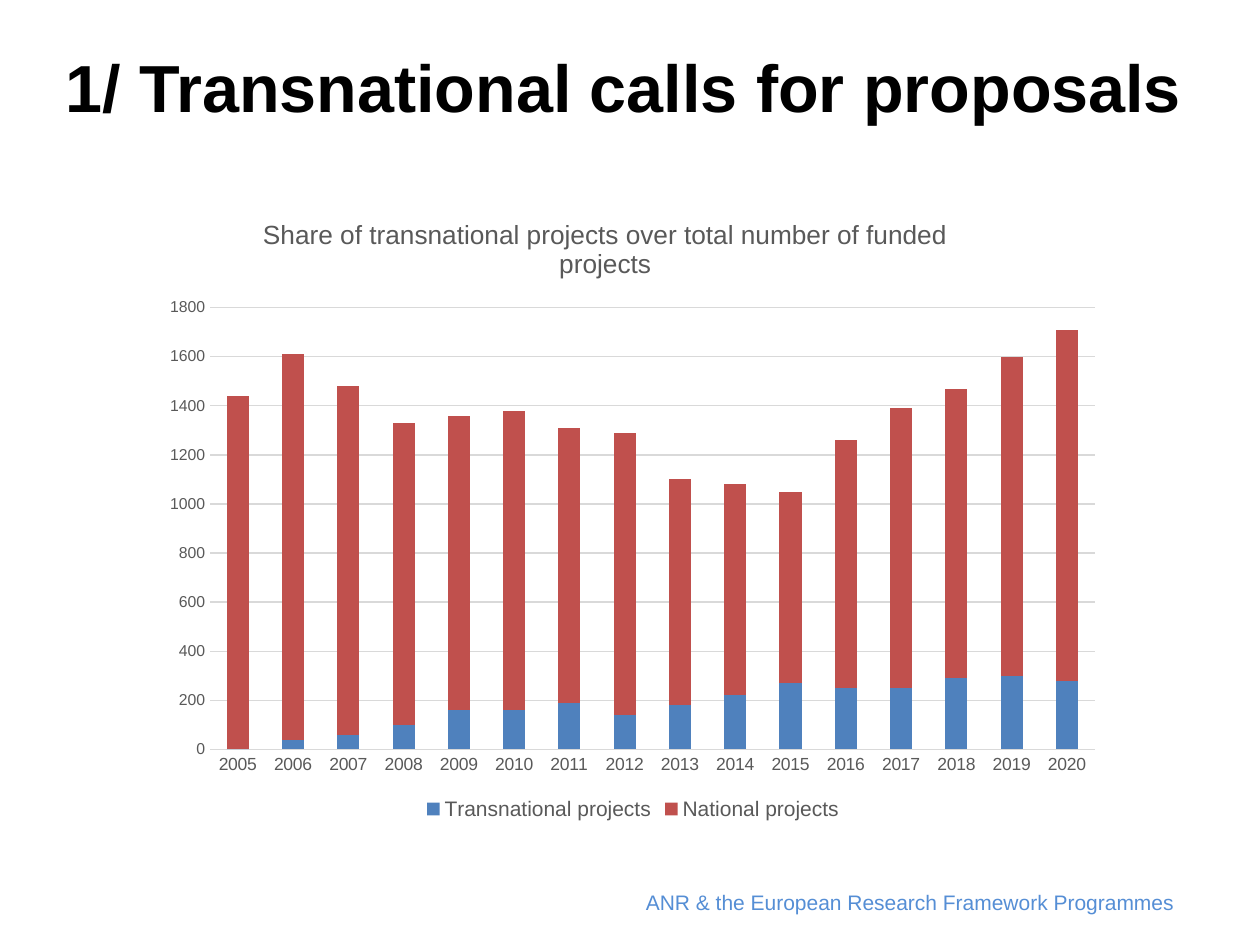
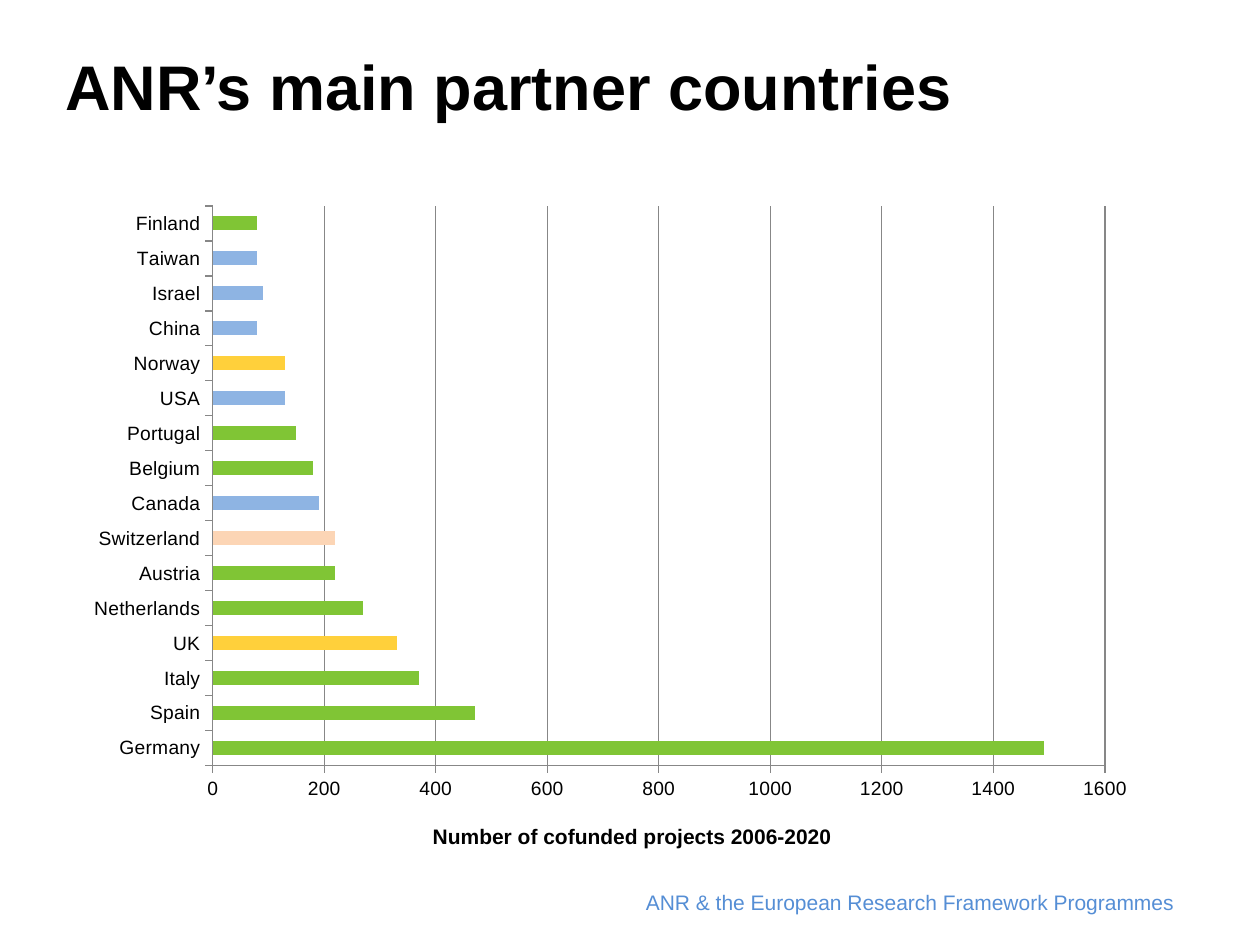
from lxml import etree
from pptx import Presentation
from pptx.chart.data import CategoryChartData
from pptx.dml.color import RGBColor
from pptx.enum import chart as charts, text
from pptx.oxml import ns
from pptx.util import Inches, Pt

# Shared style
FONT = "Arial"
BLACK, GREY, PALE_GREY = "000000", "595959", "D9D9D9"
AXIS_GREY, FOOTER_BLUE = "878787", "558ED5"
BLUE, RED = "4F81BD", "C0504D"
FOOTER = "ANR & the European Research Framework Programmes"

# Partner groups on the second slide
EU, ASSOCIATED, SWISS, OVERSEAS = "80C535", "FFD03B", "FCD5B5", "8EB4E3"

YEARS = [str(year) for year in range(2005, 2021)]
TRANSNATIONAL = [0, 40, 60, 100, 160, 160, 190, 140,
                 180, 220, 270, 250, 250, 290, 300, 280]
NATIONAL = [1440, 1570, 1420, 1230, 1200, 1220, 1120, 1150,
            920, 860, 780, 1010, 1140, 1180, 1300, 1430]
PARTNERS = [
    ("Germany", 1490, EU), ("Spain", 470, EU), ("Italy", 370, EU),
    ("UK", 330, ASSOCIATED), ("Netherlands", 270, EU), ("Austria", 220, EU),
    ("Switzerland", 220, SWISS), ("Canada", 190, OVERSEAS),
    ("Belgium", 180, EU), ("Portugal", 150, EU), ("USA", 130, OVERSEAS),
    ("Norway", 130, ASSOCIATED), ("China", 80, OVERSEAS),
    ("Israel", 90, OVERSEAS), ("Taiwan", 80, OVERSEAS), ("Finland", 80, EU),
]


def color(hex_code):
    return RGBColor.from_string(hex_code)


def style_font(font, size, hex_code, bold=False):
    font.name = FONT
    font.size = Pt(size)
    font.bold = bold
    font.color.rgb = color(hex_code)


def add_text(slide, words, box, size, hex_code, bold=False,
             align=text.PP_ALIGN.LEFT, anchor=text.MSO_ANCHOR.TOP):
    frame = slide.shapes.add_textbox(*map(Inches, box)).text_frame
    frame.word_wrap = True
    frame.vertical_anchor = anchor
    paragraph = frame.paragraphs[0]
    paragraph.text = words
    paragraph.alignment = align
    style_font(paragraph.font, size, hex_code, bold)


def add_slide(deck, title, title_width, title_size):
    slide = deck.slides.add_slide(deck.slide_layouts[6])
    add_text(slide, FOOTER, (4.95, 7.01, 4.47, 0.54), 12, FOOTER_BLUE,
             align=text.PP_ALIGN.RIGHT)
    add_text(slide, title, (0.42, 0.32, title_width, 0.72), title_size, BLACK,
             bold=True, anchor=text.MSO_ANCHOR.MIDDLE)
    return slide


def place(element, index, **position):
    """Fix a chart part's place, in fractions of the chart's size."""
    layout = element.find(ns.qn("c:layout"))
    if layout is None:
        layout = etree.Element(ns.qn("c:layout"))
        element.insert(index, layout)
    manual = etree.SubElement(layout, ns.qn("c:manualLayout"))
    settings = {"xMode": "edge", "yMode": "edge", **position}
    if "w" in position:
        settings = {"layoutTarget": "inner", **settings}
    for key, value in settings.items():
        etree.SubElement(manual, ns.qn(f"c:{key}")).set("val", str(value))


def add_bars(slide, kind, box, categories, series, overlap, plot):
    data = CategoryChartData()
    data.categories = categories
    for name, values, _ in series:
        data.add_series(name, values)
    chart = slide.shapes.add_chart(kind, *map(Inches, box), data).chart
    style_font(chart.font, 10, BLACK)
    chart.has_title = False
    chart.has_legend = False
    bars = chart.plots[0]
    bars.vary_by_categories = False
    bars.gap_width = 150
    bars.overlap = overlap
    for bar_series, (_, _, fill) in zip(bars.series, series):
        bar_series.invert_if_negative = False
        bar_series.format.fill.solid()
        bar_series.format.fill.fore_color.rgb = color(fill)
    place(chart._chartSpace.chart.plotArea, 0, **plot)
    return chart


def style_line(line, hex_code):
    line.color.rgb = color(hex_code)
    line.width = Pt(0.75)


def style_axis(axis, size, hex_code, tick, line):
    style_font(axis.tick_labels.font, size, hex_code)
    axis.major_tick_mark = tick
    axis.minor_tick_mark = charts.XL_TICK_MARK.NONE
    if line:
        style_line(axis.format.line, line)
    else:
        axis.format.line.fill.background()


def style_scale(axis, maximum, grid):
    axis.minimum_scale, axis.maximum_scale, axis.major_unit = 0, maximum, 200
    axis.has_major_gridlines = True
    style_line(axis.major_gridlines.format.line, grid)


def set_heading(heading, words, size, hex_code, bold, x, y):
    paragraph = heading.text_frame.paragraphs[0]
    paragraph.text = words
    style_font(paragraph.font, size, hex_code, bold)
    place(heading._element, 1, x=x, y=y)


def add_project_share(deck):
    slide = add_slide(deck, "1/ Transnational calls for proposals", 9.11, 38)
    chart = add_bars(
        slide, charts.XL_CHART_TYPE.COLUMN_STACKED, (1.21, 1.54, 7.63, 5.01),
        YEARS, [("Transnational projects", TRANSNATIONAL, BLUE),
                ("National projects", NATIONAL, RED)],
        100, {"x": 0.06, "y": 0.18, "w": 0.92, "h": 0.7})
    chart.has_title = True
    set_heading(chart.chart_title,
                "Share of transnational projects over total number of "
                "funded projects", 15, GREY, False, 0.11, 0.03)
    no_tick = charts.XL_TICK_MARK.NONE
    style_axis(chart.category_axis, 10, GREY, no_tick, PALE_GREY)
    style_axis(chart.value_axis, 9, GREY, no_tick, None)
    style_scale(chart.value_axis, 1800, PALE_GREY)
    chart.has_legend = True
    chart.legend.position = charts.XL_LEGEND_POSITION.BOTTOM
    chart.legend.include_in_layout = False
    style_font(chart.legend.font, 12, GREY)


def add_partner_countries(deck):
    slide = add_slide(deck, "ANR’s main partner countries", 9, 36)
    countries, projects, groups = zip(*PARTNERS)
    chart = add_bars(
        slide, charts.XL_CHART_TYPE.BAR_CLUSTERED, (0.7, 1.63, 8.45, 5.24),
        countries, [("Series 1", projects, BLUE)],
        0, {"x": 0.117, "y": 0, "w": 0.838, "h": 0.848})
    for index, group in enumerate(groups):
        fill = chart.plots[0].series[0].points[index].format.fill
        fill.solid()
        fill.fore_color.rgb = color(group)
    for axis in (chart.category_axis, chart.value_axis):
        style_axis(axis, 11, BLACK, charts.XL_TICK_MARK.OUTSIDE, AXIS_GREY)
    style_scale(chart.value_axis, 1600, AXIS_GREY)
    set_heading(chart.value_axis.axis_title,
                "Number of cofunded projects 2006-2020", 12, BLACK, True,
                0.32, 0.93)


def main():
    deck = Presentation()
    deck.slide_width, deck.slide_height = Inches(10), Inches(7.5)
    add_project_share(deck)
    add_partner_countries(deck)
    deck.save("out.pptx")


if __name__ == "__main__":
    main()
